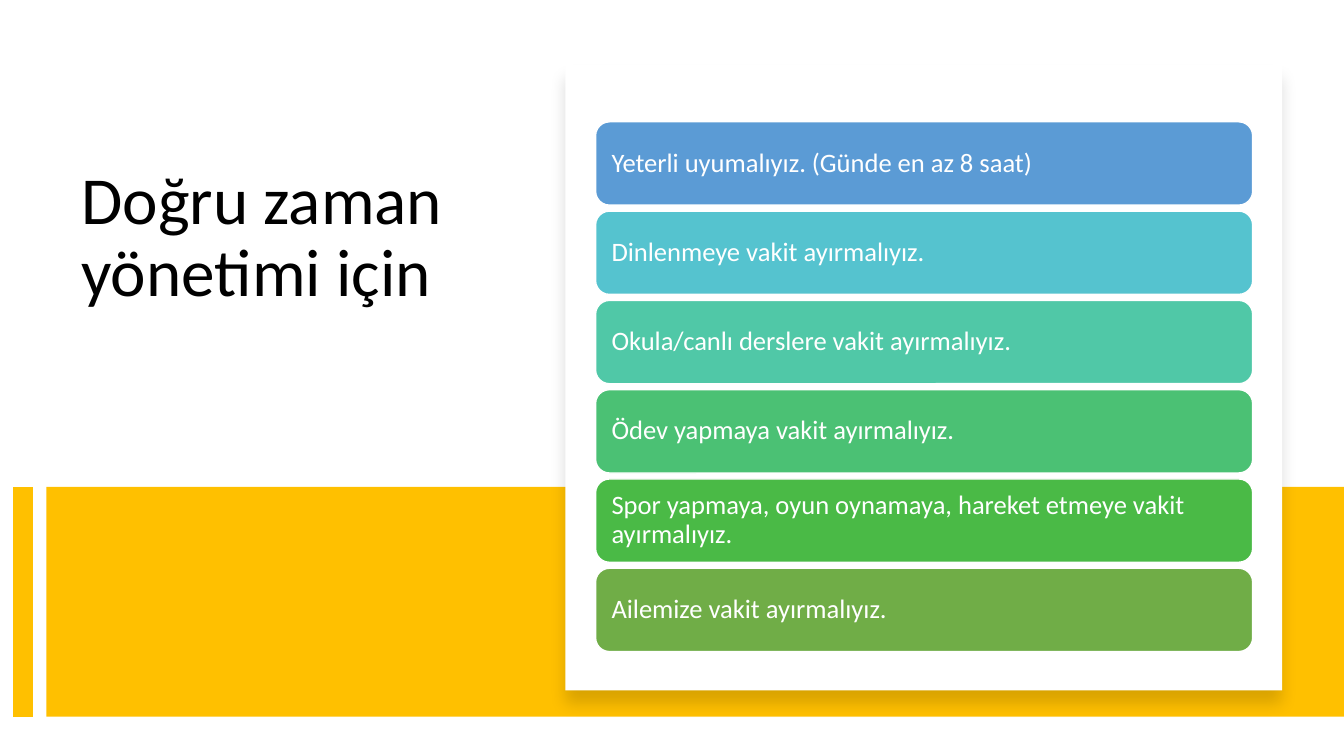
"""Build a slide listing six habits for good time management."""
from dataclasses import dataclass

from lxml import etree
from pptx import Presentation
from pptx.dml.color import RGBColor
from pptx.enum.shapes import MSO_CONNECTOR, MSO_SHAPE
from pptx.enum.text import MSO_ANCHOR, MSO_AUTO_SIZE, PP_ALIGN
from pptx.oxml.ns import qn
from pptx.util import Cm, Pt

RECT = MSO_SHAPE.RECTANGLE
ROUNDED = MSO_SHAPE.ROUNDED_RECTANGLE
STRAIGHT = MSO_CONNECTOR.STRAIGHT
TOP = MSO_ANCHOR.TOP
MIDDLE = MSO_ANCHOR.MIDDLE
LEFT = PP_ALIGN.LEFT
NO_AUTOFIT = MSO_AUTO_SIZE.NONE

HABITS = [
    ("Yeterli uyumalıyız. (Günde en az 8 saat)", "5B9BD5"),
    ("Dinlenmeye vakit ayırmalıyız.", "55C3CF"),
    ("Okula/canlı derslere vakit ayırmalıyız.", "50C8A7"),
    ("Ödev yapmaya vakit ayırmalıyız.", "4BC174"),
    ("Spor yapmaya, oyun oynamaya, hareket etmeye vakit ayırmalıyız.", "4ABA46"),
    ("Ailemize vakit ayırmalıyız.", "70AD47"),
]


@dataclass(frozen=True)
class Theme:
    font: str = "Calibri"
    title_size: int = 48
    habit_size: int = 19
    dark: str = "000000"
    light: str = "FFFFFF"
    accent: str = "FFC000"


class SlideBuilder:
    def __init__(self, slide, theme):
        self.slide = slide
        self.theme = theme

    def set_text(self, shape, text, size, color, anchor, inset=0.25):
        frame = shape.text_frame
        margin = Cm(inset)
        frame_format = {
            "word_wrap": True,
            "auto_size": NO_AUTOFIT,
            "vertical_anchor": anchor,
            "margin_left": margin,
            "margin_right": margin,
        }
        for name, value in frame_format.items():
            setattr(frame, name, value)
        paragraph = frame.paragraphs[0]
        paragraph.alignment = LEFT
        paragraph.line_spacing = 0.9
        run = paragraph.add_run()
        run.text = text
        run_format = {"name": self.theme.font, "size": Pt(size), "bold": False}
        for name, value in run_format.items():
            setattr(run.font, name, value)
        run.font.color.rgb = RGBColor.from_string(color)

    def title(self, text, left, top, width, height):
        heading = self.slide.shapes.title
        place = {"left": left, "top": top, "width": width, "height": height}
        for name, value in place.items():
            setattr(heading, name, Cm(value))
        self.set_text(heading, text, self.theme.title_size, self.theme.dark, TOP)

    def block(self, kind, left, top, width, height, fill):
        block = self.slide.shapes.add_shape(
            kind, Cm(left), Cm(top), Cm(width), Cm(height))
        block.shadow.inherit = False
        block.fill.solid()
        block.fill.fore_color.rgb = RGBColor.from_string(fill)
        block.line.fill.background()
        return block

    def panel(self, left, top, width, height):
        panel = self.block(RECT, left, top, width, height, self.theme.light)
        effects = panel._element.spPr.find(qn("a:effectLst"))
        shadow = etree.SubElement(
            effects, qn("a:outerShdw"), blurRad=str(Pt(11)), dist=str(Pt(10)),
            dir="5400000", algn="t", rotWithShape="0")
        tint = etree.SubElement(shadow, qn("a:srgbClr"), val=self.theme.dark)
        etree.SubElement(tint, qn("a:alpha"), val="15000")

    def stripe(self, x, top, bottom, weight):
        stripe = self.slide.shapes.add_connector(
            STRAIGHT, Cm(x), Cm(top), Cm(x), Cm(bottom))
        stripe.line.color.rgb = RGBColor.from_string(self.theme.accent)
        stripe.line.width = Pt(weight)
        etree.SubElement(stripe._element.spPr, qn("a:effectLst"))

    def habit(self, text, left, top, width, height, fill):
        card = self.block(ROUNDED, left, top, width, height, fill)
        card.line.color.rgb = RGBColor.from_string(self.theme.light)
        card.line.width = Pt(1)
        self.set_text(card, text, self.theme.habit_size, self.theme.light,
                      MIDDLE, inset=0.3)


def main():
    deck = Presentation()
    deck.slide_width = Cm(33.87)
    deck.slide_height = Cm(19.05)
    builder = SlideBuilder(
        deck.slides.add_slide(deck.slide_layouts[5]), Theme())

    builder.title("Doğru zaman yönetimi için", 1.8, 4.06, 10.54, 7.47)
    band_top, band_height = 12.27, 5.79
    builder.block(RECT, 1.17, band_top, 32.7, band_height, builder.theme.accent)
    builder.stripe(0.58, band_top, band_top + band_height, 14)
    builder.panel(14.25, 1.63, 18.06, 15.77)

    first_top, card_height, gap = 3.07, 2.1, 0.15
    for row, (text, fill) in enumerate(HABITS):
        top = first_top + row * (card_height + gap)
        builder.habit(text, 15.01, top, 16.56, card_height, fill)

    deck.save("out.pptx")


if __name__ == "__main__":
    main()
